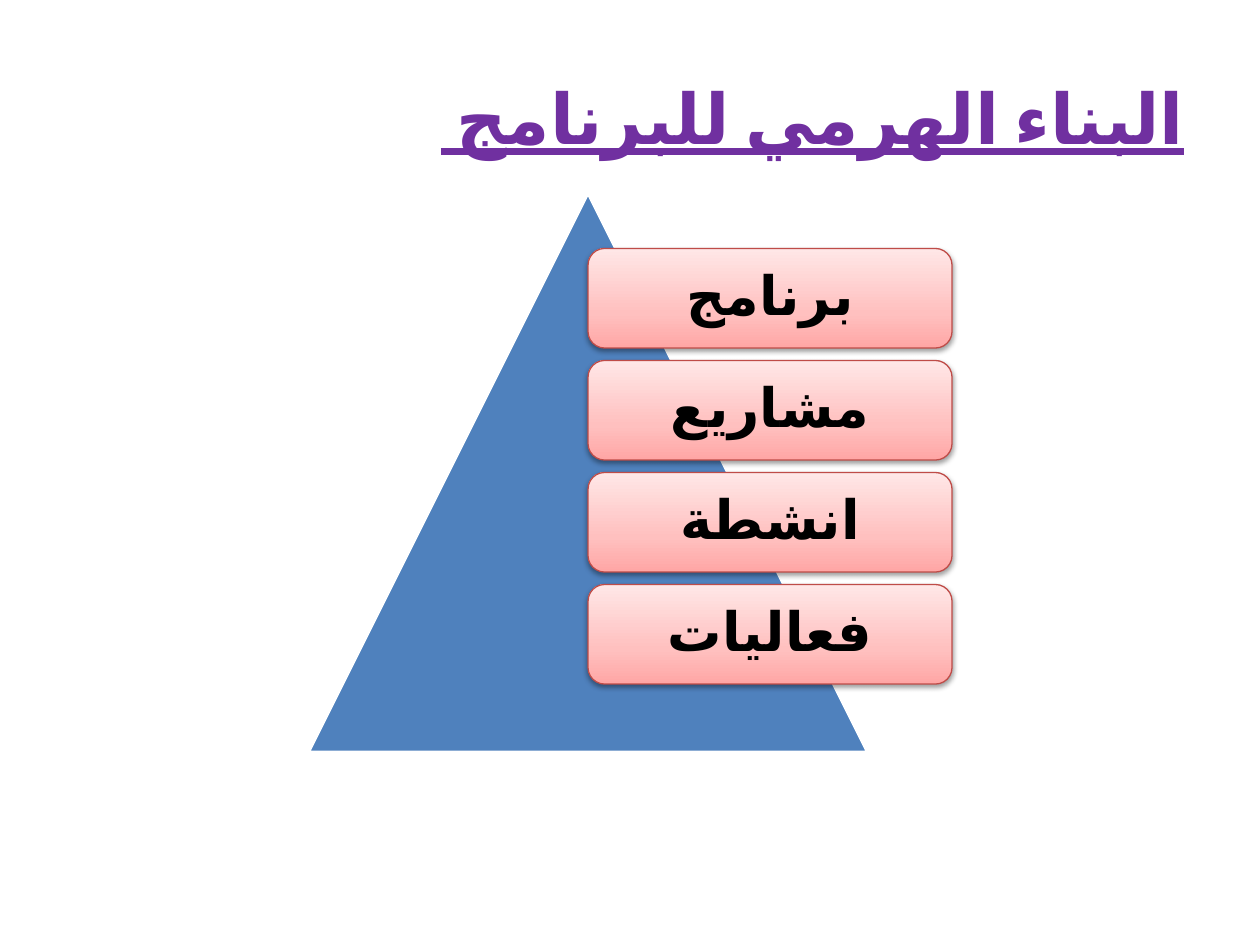
from lxml.etree import SubElement
from pptx import Presentation
from pptx.dml.color import RGBColor
from pptx.enum.lang import MSO_LANGUAGE_ID as Language
from pptx.enum.shapes import MSO_SHAPE as Shape
from pptx.enum.text import MSO_ANCHOR as Anchor, PP_ALIGN as Align
from pptx.oxml import parse_xml
from pptx.oxml.ns import nsdecls, qn
from pptx.util import Cm, Pt

COLORS = {
    "title": "7030A0",
    "pyramid": "4F81BD",
    "pyramid_line": "FFFFFF",
    "card_line": "BF4C48",
    "card_text": "000000",
    "shadow": "000000",
}
CARD_GRADIENT = [(0, "FFA6A5"), (35, "FFC0BF"), (100, "FFE7E7")]
TITLE = "البناء الهرمي للبرنامج "
LEVELS = ["برنامج", "مشاريع", "انشطة", "فعاليات"]
BASE_FONT = {"name": "Calibri", "bold": True, "language_id": Language.ARABIC}
TITLE_FONT = {**BASE_FONT, "size": Pt(40), "underline": True}
CARD_FONT = {**BASE_FONT, "size": Pt(31)}
CARD_FRAME = {
    "word_wrap": True,
    "vertical_anchor": Anchor.MIDDLE,
    "margin_left": Cm(0.43),
    "margin_right": Cm(0.43),
    "margin_top": Cm(0.43),
    "margin_bottom": Cm(0.43),
}


def color(name):
    return RGBColor.from_string(COLORS[name])


def apply_format(target, values):
    for name, value in values.items():
        setattr(target, name, value)


def write_rtl(text_frame, text, font, color_name, alignment):
    paragraph = text_frame.paragraphs[0]
    paragraph.alignment = alignment
    paragraph._p.get_or_add_pPr().set("rtl", "1")
    run = paragraph.add_run()
    run.text = text
    apply_format(run.font, font)
    run.font.color.rgb = color(color_name)
    SubElement(run._r.get_or_add_rPr(), qn("a:cs"), typeface=font["name"])
    return paragraph


def set_line(shape, color_name, width):
    shape.line.color.rgb = color(color_name)
    shape.line.width = Pt(width)


def set_gradient(shape, stops, angle):
    gradient = parse_xml(f'<a:gradFill {nsdecls("a")} rotWithShape="1"/>')
    stop_list = SubElement(gradient, qn("a:gsLst"))
    for position, value in stops:
        stop = SubElement(stop_list, qn("a:gs"), pos=str(position * 1000))
        SubElement(stop, qn("a:srgbClr"), val=value)
    SubElement(gradient, qn("a:lin"), ang=str(angle * 60000), scaled="0")
    shape._element.spPr.find(qn("a:prstGeom")).addnext(gradient)


def set_shadow(shape, blur, distance, angle, opacity):
    shape.shadow.inherit = False
    effects = shape._element.spPr.find(qn("a:effectLst"))
    shadow = SubElement(
        effects, qn("a:outerShdw"), blurRad=str(Pt(blur)), dist=str(Pt(distance)),
        dir=str(angle * 60000), rotWithShape="0",
    )
    tint = SubElement(shadow, qn("a:srgbClr"), val=COLORS["shadow"])
    SubElement(tint, qn("a:alpha"), val=str(opacity * 1000))


def add_title(slide, left, top, width, height):
    title = slide.shapes.title
    apply_format(title, {"left": left, "top": top, "width": width, "height": height})
    title.text_frame.vertical_anchor = Anchor.MIDDLE
    write_rtl(title.text_frame, TITLE, TITLE_FONT, "title", Align.RIGHT)


def add_card(shapes, text, left, top, width, height):
    card = shapes.add_shape(Shape.ROUNDED_RECTANGLE, left, top, width, height)
    set_line(card, "card_line", 0.75)
    set_gradient(card, CARD_GRADIENT, 270)
    set_shadow(card, blur=3.1, distance=1.6, angle=90, opacity=38)
    apply_format(card.text_frame, CARD_FRAME)
    paragraph = write_rtl(card.text_frame, text, CARD_FONT, "card_text", Align.CENTER)
    paragraph.line_spacing = 0.9


def add_pyramid(slide, left, top, size):
    shapes = slide.shapes.add_group_shape().shapes
    pyramid = shapes.add_shape(Shape.ISOSCELES_TRIANGLE, left, top, size, size)
    pyramid.shadow.inherit = False
    pyramid.fill.solid()
    pyramid.fill.fore_color.rgb = color("pyramid")
    set_line(pyramid, "pyramid_line", 2)

    pitch = int(size * 0.8 / len(LEVELS))
    card_height = int(pitch * 8 / 9)
    for index, text in enumerate(LEVELS):
        card_top = top + int(size * 0.1) + index * pitch
        add_card(shapes, text, left + size // 2, card_top, int(size * 0.65), card_height)


def main():
    presentation = Presentation()
    presentation.slide_width = Cm(25.4)
    presentation.slide_height = Cm(19.05)
    slide = presentation.slides.add_slide(presentation.slide_layouts[5])
    add_title(slide, Cm(1.27), Cm(0.76), Cm(22.86), Cm(3.18))
    add_pyramid(slide, Cm(6.21), Cm(3.88), Cm(11.29))
    presentation.save("out.pptx")


if __name__ == "__main__":
    main()
